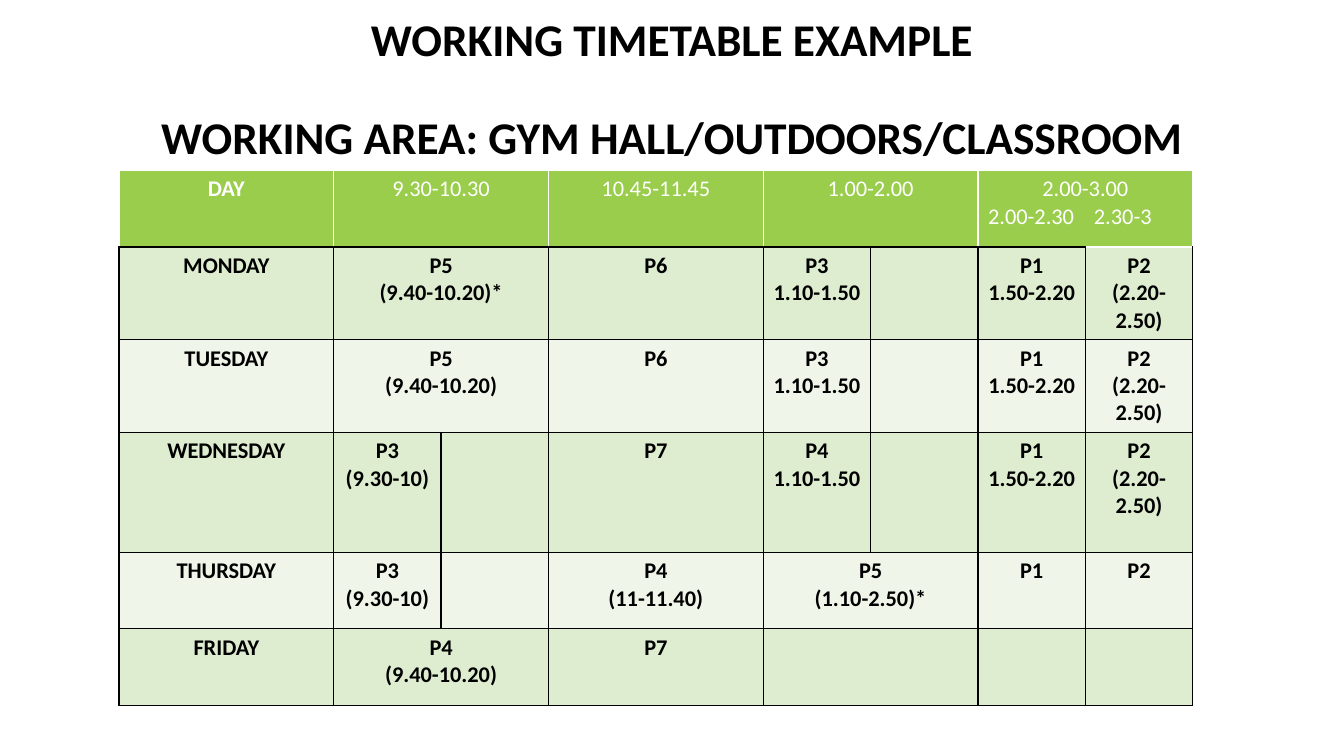
from dataclasses import dataclass
from typing import Any

from lxml.etree import SubElement
from pptx import Presentation
from pptx.dml.color import RGBColor
from pptx.enum.text import MSO_ANCHOR, PP_ALIGN
from pptx.oxml.ns import qn
from pptx.util import Inches, Pt

HUES = {"head": "9ACD4C", "dark": "DEEDD0", "light": "EFF6E9",
        "white": "FFFFFF", "black": "000000"}
WIDE, HIGH = Inches(13.33), Inches(7.5)
UNIT = Inches(10.65) // 10
COLS = (2, 1, 1, 2, 1, 1, 1, 1)
TITLE = ("WORKING TIMETABLE EXAMPLE", "WORKING AREA: GYM HALL/OUTDOORS/CLASSROOM")
TAB = Inches(1.05)


@dataclass
class Slot:
    text: str = ""
    span: int = 1


@dataclass
class Row:
    high: float
    slots: tuple[Slot, ...]


GAP = Slot()
P1, P2 = Slot("P1\n1.50-2.20"), Slot("P2\n(2.20-2.50)")
P3, P4 = Slot("P3\n1.10-1.50"), Slot("P4\n1.10-1.50")
EARLY = Slot("P3\n(9.30-10)")
ROWS = (
    Row(0.76, (Slot("DAY"), Slot("9.30-10.30", 2), Slot("10.45-11.45"),
               Slot("1.00-2.00", 2), Slot("2.00-3.00\n2.00-2.30\t2.30-3", 2))),
    Row(0.92, (Slot("MONDAY"), Slot("P5\n(9.40-10.20)*", 2), Slot("P6"), P3, GAP, P1, P2)),
    Row(0.92, (Slot("TUESDAY"), Slot("P5\n(9.40-10.20)", 2), Slot("P6"), P3, GAP, P1, P2)),
    Row(1.19, (Slot("WEDNESDAY"), EARLY, GAP, Slot("P7"), P4, GAP, P1, P2)),
    Row(0.76, (Slot("THURSDAY"), EARLY, GAP, Slot("P4\n(11-11.40)"),
               Slot("P5\n(1.10-2.50)*", 2), Slot("P1"), Slot("P2"))),
    Row(0.76, (Slot("FRIDAY"), Slot("P4\n(9.40-10.20)", 2), Slot("P7"),
               Slot("", 2), GAP, GAP)),
)


def apply(item: Any, form: dict[str, Any]) -> None:
    for name, value in form.items():
        setattr(item, name, value)


def style(para: Any, hue: str, size: float, bold: bool) -> None:
    apply(para.font, {"name": "Calibri", "size": Pt(size), "bold": bold})
    para.font.color.rgb = RGBColor.from_string(HUES[hue])


def edge(cell: Any, hues: dict[str, str]) -> None:
    props = cell._tc.get_or_add_tcPr()
    for side, hue in hues.items():
        line = SubElement(props, qn(f"a:ln{side}"), w=str(Pt(1)))
        fill = SubElement(line, qn("a:solidFill"))
        SubElement(fill, qn("a:srgbClr"), val=HUES[hue])


def paint(cell: Any, row: int, col: int) -> None:
    line = "black" if row else "white"
    top = "white" if row == 0 or (row, col) == (1, 7) else "black"
    edge(cell, {"L": line, "R": line, "T": top, "B": "black"})
    fill = "head" if row == 0 else ("light", "dark")[row % 2]
    cell.fill.solid()
    cell.fill.fore_color.rgb = RGBColor.from_string(HUES[fill])


def write(cell: Any, text: str, row: int, col: int) -> None:
    cell.text = text
    for para in cell.text_frame.paragraphs:
        para.alignment = PP_ALIGN.CENTER
        if "\t" in para.text:
            para.alignment = PP_ALIGN.LEFT
            tabs = SubElement(para._p.get_or_add_pPr(), qn("a:tabLst"))
            SubElement(tabs, qn("a:tab"), pos=str(TAB), algn="l")
        style(para, "black" if row else "white", 16, row > 0 or col == 0)


def add_title(slide: Any) -> None:
    title = slide.shapes.title
    apply(title, {"left": int(WIDE * 0.094), "top": int(HIGH * 0.04),
                  "width": int(WIDE * 0.812), "height": int(HIGH * 0.16)})
    frame = title.text_frame
    frame.text = "\n".join(TITLE)
    apply(frame, {"vertical_anchor": MSO_ANCHOR.MIDDLE, "word_wrap": True})
    for rank, para in enumerate(frame.paragraphs):
        apply(para, {"alignment": PP_ALIGN.CENTER, "line_spacing": 0.9,
                     "space_before": Pt(35 * rank)})
        style(para, "black", 32.4, True)


def add_grid(slide: Any) -> None:
    tall = Inches(sum(row.high for row in ROWS))
    table = slide.shapes.add_table(len(ROWS), len(COLS), Inches(1.18), Inches(1.69),
                                   UNIT * sum(COLS), tall).table
    apply(table, {"first_row": True, "horz_banding": False})
    for col, share in zip(table.columns, COLS):
        col.width = UNIT * share
    for r, row in enumerate(ROWS):
        table.rows[r].height = Inches(row.high)
        for c in range(len(COLS)):
            paint(table.cell(r, c), r, c)
        c = 0
        for slot in row.slots:
            cell = table.cell(r, c)
            if slot.span > 1:
                cell.merge(table.cell(r, c + slot.span - 1))
            write(cell, slot.text, r, c)
            c += slot.span


def main() -> None:
    deck = Presentation()
    apply(deck, {"slide_width": WIDE, "slide_height": HIGH})
    slide = deck.slides.add_slide(deck.slide_layouts[5])
    # Heading
    add_title(slide)
    # Timetable
    add_grid(slide)
    deck.save("out.pptx")


if __name__ == "__main__":
    main()
